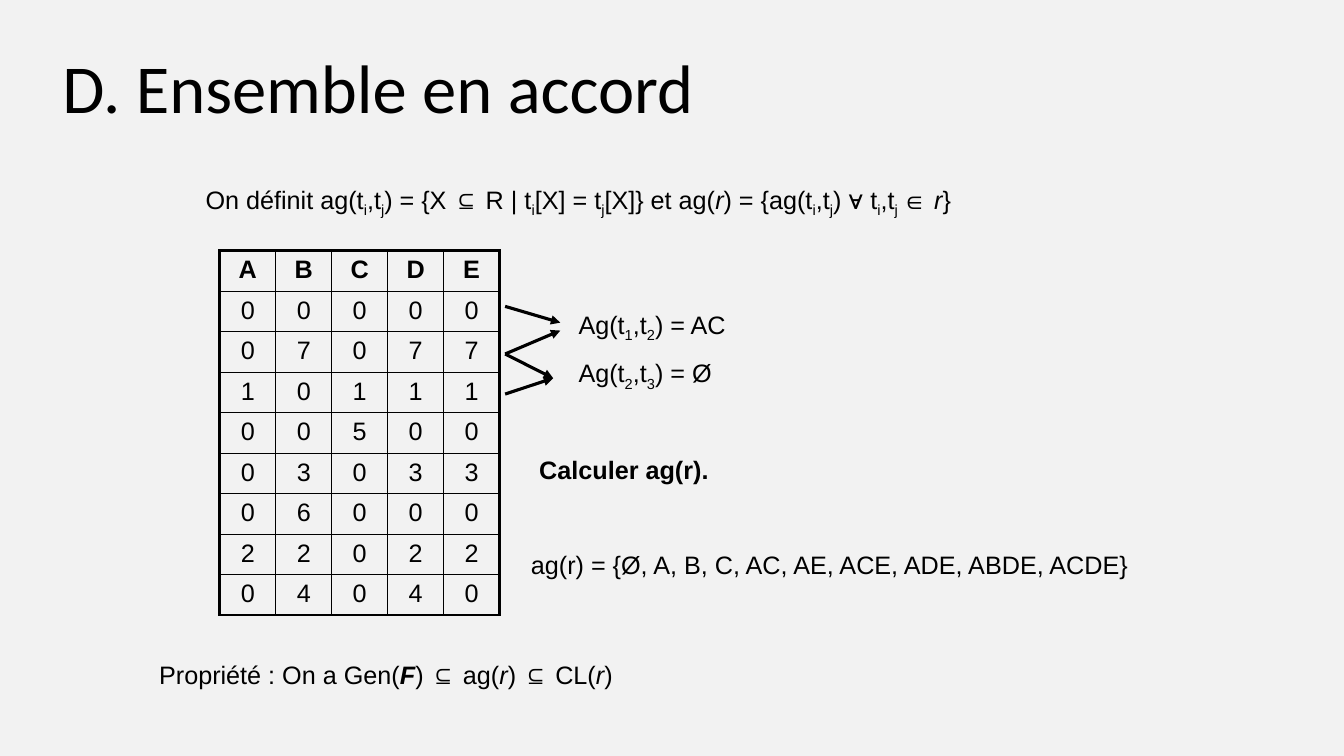
"""Build the slide on agree sets of a relation."""
from lxml import etree
from pptx import Presentation
from pptx.dml.color import RGBColor
from pptx.enum.shapes import MSO_CONNECTOR
from pptx.enum.text import MSO_ANCHOR, PP_ALIGN
from pptx.oxml.ns import qn
from pptx.util import Cm, Pt

LINE = MSO_CONNECTOR.STRAIGHT
MIDDLE = MSO_ANCHOR.MIDDLE
CENTER, LEFT = PP_ALIGN.CENTER, PP_ALIGN.LEFT
INK, PAPER = "000000", "F2F2F2"
THIN, THICK = 1, 2.25

TITLE = "D. Ensemble en accord"
ROWS = ["ABCDE", "00000", "07077", "10111", "00500",
        "03033", "06000", "22022", "04040"]
TABLE = (5.54, 6.32)
COL, ROW = 1.41, 1.02

# Between tildes: _ subscript, / italic, * bold, # bold italic.
TEXTS = [
    (4.93, 4.52, 24, 1.02,
     "On définit ag(t~_i~,t~_j~) = {X ⊆ R | t~_i~[X] = t~_j~[X]} et ag(~/r~)"
     " = {ag(t~_i~,t~_j~) ∀ t~_i~,t~_j ~∈ ~/r~}"),
    (14.33, 7.67, 8.81, 1.02, "Ag(t~_1~,t~_2~) = AC"),
    (14.33, 8.89, 6.2, 1.02, "Ag(t~_2~,t~_3~) = Ø"),
    (13.34, 11.33, 15.01, 1.02, "~*Calculer ag(r).~"),
    (13.13, 13.72, 15.8, 1.02,
     "ag(r) = {Ø, A, B, C, AC, AE, ACE, ADE, ABDE, ACDE}"),
    (3.76, 16.48, 25.73, 1.8,
     "Propriété : On a Gen(~#F~) ⊆ ag(~/r~) ⊆ CL(~/r~)"),
]
START = 12.73
ARROWS = [(7.72, 14.12, 8.13), (8.92, 14.12, 8.33),
          (8.92, 13.94, 9.53), (9.93, 13.94, 9.53)]


def color(code):
    return RGBColor.from_string(code)


def style(run, size=18, face="Arial", bold=False, slant=False):
    font = run.font
    font.name, font.size = face, Pt(size)
    font.bold, font.italic = bold, slant
    font.color.rgb = color(INK)


def add_text(slide, left, top, width, height, text):
    box = slide.shapes.add_textbox(Cm(left), Cm(top), Cm(width), Cm(height))
    frame = box.text_frame
    frame.word_wrap = True
    para = frame.paragraphs[0]
    for i, part in enumerate(text.split("~")):
        mark = part[0] if i % 2 else ""
        words = part[len(mark):]
        if not words:
            continue
        run = para.add_run()
        run.text = words
        style(run, bold=mark in ("*", "#"), slant=mark in ("/", "#"))
        if mark == "_":
            run._r.get_or_add_rPr().set("baseline", "-25000")


def add_edge(cell, side, width):
    props = cell._tc.get_or_add_tcPr()
    edge = etree.SubElement(props, qn("a:ln" + side), w=str(Pt(width)))
    fill = etree.SubElement(edge, qn("a:solidFill"))
    etree.SubElement(fill, qn("a:srgbClr"), val=INK)


def add_grid(slide):
    high, wide = len(ROWS), len(ROWS[0])
    left, top = TABLE
    grid = slide.shapes.add_table(high, wide, Cm(left), Cm(top),
                                  Cm(COL * wide), Cm(ROW * high)).table
    grid.first_row = grid.horz_banding = False
    for col in grid.columns:
        col.width = Cm(COL)
    for y, row in enumerate(ROWS):
        grid.rows[y].height = Cm(ROW)
        for x, value in enumerate(row):
            cell = grid.cell(y, x)
            cell.text_frame.text = value
            para = cell.text_frame.paragraphs[0]
            para.alignment = CENTER
            style(para.runs[0], bold=y == 0)
            outer = {"L": x == 0, "R": x == wide - 1,
                     "T": y == 0, "B": y == high - 1}
            for side, rim in outer.items():
                add_edge(cell, side, THICK if rim else THIN)
            cell.fill.background()


def add_arrow(slide, y, end, drop):
    arrow = slide.shapes.add_connector(LINE, Cm(START), Cm(y), Cm(end), Cm(drop))
    arrow.line.color.rgb = color(INK)
    arrow.line.width = Pt(THICK)
    etree.SubElement(arrow.line._get_or_add_ln(), qn("a:tailEnd"), type="triangle")
    etree.SubElement(arrow._element.spPr, qn("a:effectLst"))


def add_title(slide):
    title = slide.shapes.title
    title.left, title.top = Cm(1.32), Cm(0.91)
    title.width, title.height = Cm(25.76), Cm(2.54)
    frame = title.text_frame
    frame.text = TITLE
    frame.vertical_anchor = MIDDLE
    para = frame.paragraphs[0]
    para.alignment = LEFT
    style(para.runs[0], 49, "Calibri")


def main():
    deck = Presentation()
    deck.slide_width, deck.slide_height = Cm(33.87), Cm(19.05)
    slide = deck.slides.add_slide(deck.slide_layouts[5])
    back = slide.background.fill
    back.solid()
    back.fore_color.rgb = color(PAPER)
    add_title(slide)
    add_grid(slide)
    for arrow in ARROWS:
        add_arrow(slide, *arrow)
    for text in TEXTS:
        add_text(slide, *text)
    deck.save("out.pptx")


if __name__ == "__main__":
    main()
